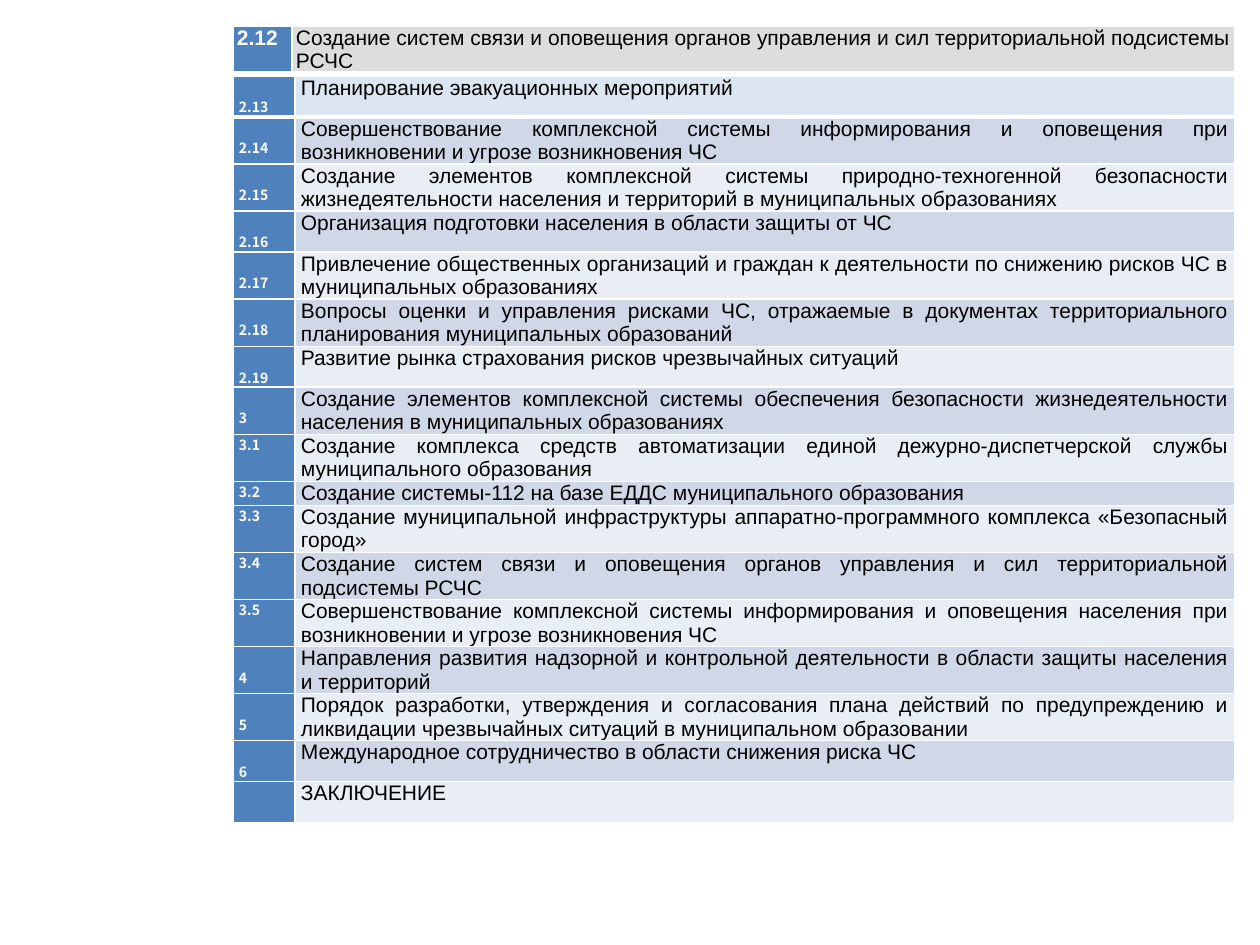
from pptx import Presentation
from pptx import util as u
from pptx.dml.color import RGBColor
from pptx.enum import text
from pptx.oxml import parse_xml
from pptx.oxml.ns import nsdecls

PX = 914400 / 126
WHITE = RGBColor(0xFF, 0xFF, 0xFF)
BLACK = RGBColor(0x00, 0x00, 0x00)
BLUE = RGBColor(0x4F, 0x81, 0xBD)
GREY = RGBColor(0xDD, 0xDD, 0xDD)
PALE_BLUE = RGBColor(0xDC, 0xE6, 0xF2)
BANDS = [RGBColor(0xE9, 0xED, 0xF4), RGBColor(0xD0, 0xD8, 0xE8)]

LEFT = 233
SHORT, LONG, SINGLE = 41, 47, 24
THIN, THICK = 1, 3

FIRST_SECTION = [
    ("2.12", "Создание систем связи и оповещения органов управления и сил территориальной подсистемы РСЧС", LONG),
]
SECTIONS = [
    ("2.13", "Планирование эвакуационных мероприятий", SHORT),
    ("2.14", "Совершенствование комплексной системы информирования и оповещения при возникновении и угрозе возникновения ЧС", LONG),
    ("2.15", "Создание элементов комплексной системы природно-техногенной безопасности жизнедеятельности населения и территорий в муниципальных образованиях", LONG),
    ("2.16", "Организация подготовки населения в области защиты от ЧС", SHORT),
    ("2.17", "Привлечение общественных организаций и граждан к деятельности по снижению рисков ЧС в муниципальных образованиях", LONG),
    ("2.18", "Вопросы оценки и управления рисками ЧС, отражаемые в документах территориального планирования муниципальных образований", LONG),
    ("2.19", "Развитие рынка страхования рисков чрезвычайных ситуаций", SHORT),
    ("3", "Создание элементов комплексной системы обеспечения безопасности жизнедеятельности населения в муниципальных образованиях", LONG),
    ("3.1", "Создание комплекса средств автоматизации единой дежурно-диспетчерской службы муниципального образования", LONG),
    ("3.2", "Создание системы-112 на базе ЕДДС муниципального образования", SINGLE),
    ("3.3", "Создание муниципальной инфраструктуры аппаратно-программного комплекса «Безопасный город»", LONG),
    ("3.4", "Создание систем связи и оповещения органов управления и сил территориальной подсистемы РСЧС", LONG),
    ("3.5", "Совершенствование комплексной системы информирования и оповещения населения при возникновении и угрозе возникновения ЧС", LONG),
    ("4", "Направления развития надзорной и контрольной деятельности в области защиты населения и территорий", LONG),
    ("5", "Порядок разработки, утверждения и согласования плана действий по предупреждению и ликвидации чрезвычайных ситуаций в муниципальном образовании", LONG),
    ("6", "Международное сотрудничество в области снижения риска ЧС", SHORT),
    ("", "ЗАКЛЮЧЕНИЕ", SHORT),
]


def px(length):
    return u.Emu(round(length * PX))


def set_borders(cell, top, bottom):
    properties = cell._tc.get_or_add_tcPr()
    sides = {"lnL": THIN, "lnR": THIN, "lnT": top, "lnB": bottom}
    for position, (side, width) in enumerate(sides.items()):
        properties.insert(position, parse_xml(
            f'<a:{side} {nsdecls("a")} w="{u.Pt(width)}"><a:solidFill>'
            f'<a:srgbClr val="{WHITE}"/></a:solidFill></a:{side}>'))


def fill_cell(cell, fill, margin):
    cell.fill.solid()
    cell.fill.fore_color.rgb = fill
    cell.margin_left = cell.margin_right = px(margin)
    cell.margin_top = cell.margin_bottom = 0


def write(cell, wording, size, font_name, color, bold, spacing=None, justified=True):
    if not wording:
        return
    paragraph = cell.text_frame.paragraphs[0]
    paragraph.alignment = text.PP_ALIGN.JUSTIFY if justified else text.PP_ALIGN.LEFT
    paragraph.line_spacing = spacing
    run = paragraph.add_run()
    run.text = wording
    run.font.size = u.Pt(size)
    run.font.name = font_name
    run.font.color.rgb = color
    run.font.bold = bold


def add_contents(slide, top, widths, sections, margin, first_fill, label_size, label_font):
    heights = [height for _, _, height in sections]
    contents = slide.shapes.add_table(
        len(sections), 2, px(LEFT), px(top), px(sum(widths)), px(sum(heights))).table
    for column, width in zip(contents.columns, widths):
        column.width = px(width)
    for index, (number, title, height) in enumerate(sections):
        contents.rows[index].height = px(height)
        number_cell, title_cell = contents.cell(index, 0), contents.cell(index, 1)
        title_fill = BANDS[index % 2] if index else first_fill
        for cell, fill in ((number_cell, BLUE), (title_cell, title_fill)):
            fill_cell(cell, fill, margin)
            set_borders(cell, THICK if index == 1 else THIN, THICK if index == 0 else THIN)
        subsection = number.startswith("3.")
        spacing = 2.0 if label_size == 8 and not subsection else None
        write(number_cell, number, label_size, label_font, WHITE, True, spacing, not subsection)
        write(title_cell, title, 12, "Arial", BLACK, False)


def main():
    presentation = Presentation()
    presentation.slide_width, presentation.slide_height = px(1260), px(945)
    slide = presentation.slides.add_slide(presentation.slide_layouts[6])
    add_contents(slide, 26, (59, 943), FIRST_SECTION, 4, GREY, 12, "Arial")
    add_contents(slide, 76, (62, 940), SECTIONS, 6, PALE_BLUE, 8, "Noto Sans CJK KR")
    presentation.save("out.pptx")


if __name__ == "__main__":
    main()
